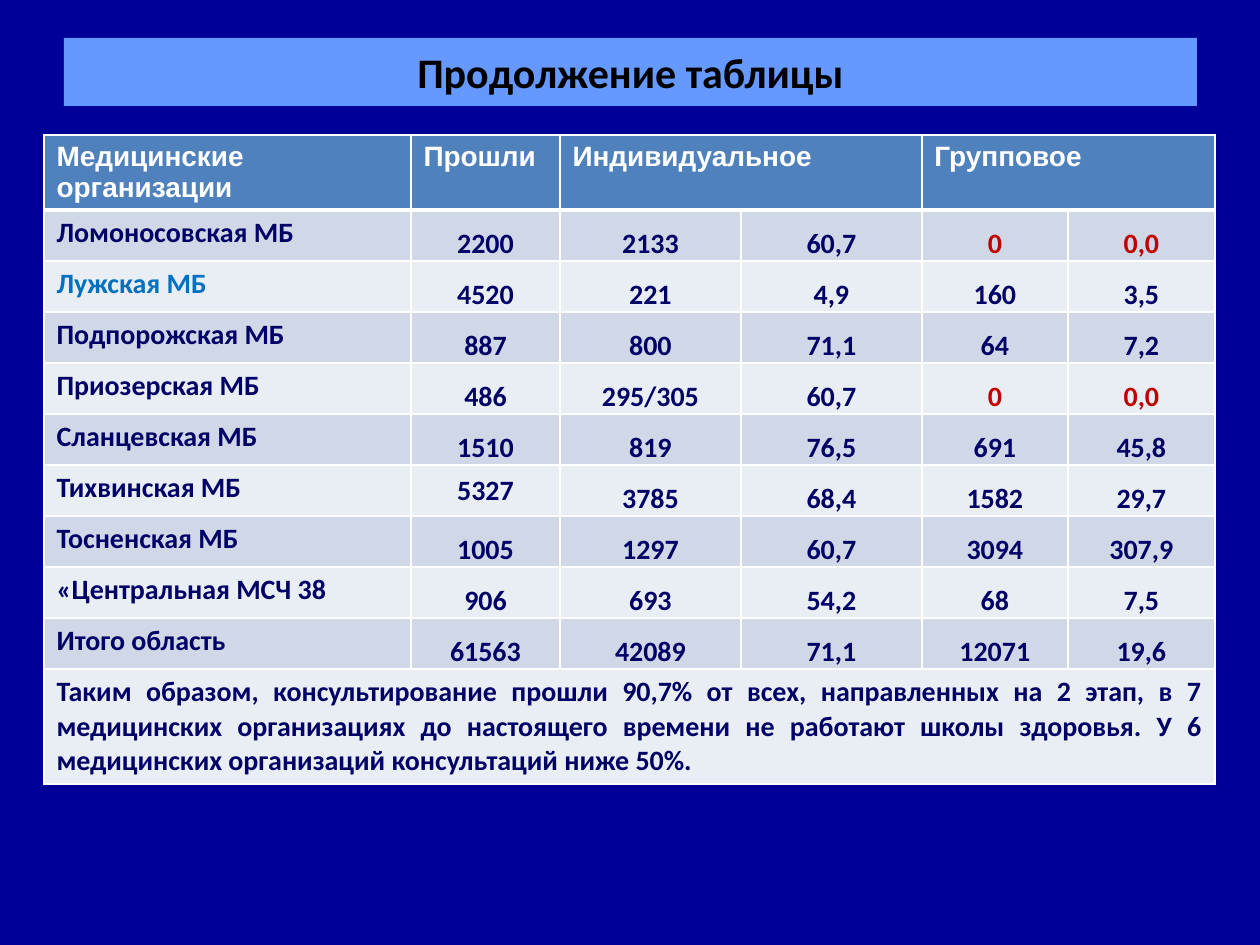
from lxml.etree import SubElement
from pptx import Presentation
from pptx.dml.color import RGBColor
from pptx.enum.text import MSO_ANCHOR, PP_ALIGN
from pptx.oxml.ns import qn
from pptx.util import Emu, Inches, Pt

PX = Inches(1) // 126
COLORS = {
    "background": "000099",
    "banner": "6699FF",
    "black": "000000",
    "white": "FFFFFF",
    "header": "4F81BD",
    "odd": "D0D8E8",
    "even": "E9EDF4",
    "navy": "000066",
    "blue": "0070C0",
    "red": "C00000",
}

HEADINGS = ["Медицинские организации", "Прошли", "Индивидуальное", "", "Групповое", ""]
CLINICS = [
    ["Ломоносовская МБ", "2200", "2133", "60,7", "0", "0,0"],
    ["Лужская МБ", "4520", "221", "4,9", "160", "3,5"],
    ["Подпорожская МБ", "887", "800", "71,1", "64", "7,2"],
    ["Приозерская МБ", "486", "295/305", "60,7", "0", "0,0"],
    ["Сланцевская МБ", "1510", "819", "76,5", "691", "45,8"],
    ["Тихвинская МБ", "5327", "3785", "68,4", "1582", "29,7"],
    ["Тосненская МБ", "1005", "1297", "60,7", "3094", "307,9"],
    ["«Центральная МСЧ 38", "906", "693", "54,2", "68", "7,5"],
    ["Итого область", "61563", "42089", "71,1", "12071", "19,6"],
]
CONCLUSION = (
    "Таким образом, консультирование прошли 90,7% от всех, направленных на 2 этап, "
    "в 7 медицинских организациях до настоящего времени не работают школы здоровья. "
    "У 6 медицинских организаций консультаций ниже 50%."
)
COLUMN_WIDTHS = [367, 149, 181, 181, 146, 147]
ROW_HEIGHTS = [75] + [51] * len(CLINICS) + [115]
TEXT_COLORS = {"Лужская МБ": "blue", "0": "red", "0,0": "red"}


def px(length):
    return Emu(length * PX)


def rgb(name):
    return RGBColor.from_string(COLORS[name])


class Deck:
    def __init__(self, width, height):
        self.presentation = Presentation()
        self.presentation.slide_width = px(width)
        self.presentation.slide_height = px(height)
        self.slide = None

    def add_slide(self):
        self.slide = self.presentation.slides.add_slide(self.presentation.slide_layouts[5])
        fill = self.slide.background.fill
        fill.solid()
        fill.fore_color.rgb = rgb("background")

    def set_text(self, frame, text, size, color, font="Calibri", align=PP_ALIGN.LEFT):
        frame.text = text
        paragraph = frame.paragraphs[0]
        paragraph.alignment = align
        paragraph.font.name = font
        paragraph.font.size = Pt(size)
        paragraph.font.bold = True
        paragraph.font.color.rgb = rgb(color)

    def title(self, text, left, top, width, height):
        banner = self.slide.shapes.title
        banner.left, banner.top = px(left), px(top)
        banner.width, banner.height = px(width), px(height)
        banner.fill.solid()
        banner.fill.fore_color.rgb = rgb("banner")
        banner.text_frame.vertical_anchor = MSO_ANCHOR.MIDDLE
        self.set_text(banner.text_frame, text, 24, "black", align=PP_ALIGN.CENTER)

    def table(self, left, top, widths, heights):
        table = self.slide.shapes.add_table(
            len(heights), len(widths), px(left), px(top), px(sum(widths)), px(sum(heights))
        ).table
        for column, width in zip(table.columns, widths):
            column.width = px(width)
        for row, height in zip(table.rows, heights):
            row.height = px(height)
        return table

    def cell(self, cell, text, fill, color, top=1, bottom=1, **style):
        properties = cell._tc.get_or_add_tcPr()
        for side, weight in (("L", 1), ("R", 1), ("T", top), ("B", bottom)):
            line = SubElement(properties, qn(f"a:ln{side}"), w=str(Pt(weight)))
            solid = SubElement(line, qn("a:solidFill"))
            SubElement(solid, qn("a:srgbClr"), val=COLORS["white"])
        cell.fill.solid()
        cell.fill.fore_color.rgb = rgb(fill)
        self.set_text(cell.text_frame, text, 16, color, **style)

    def number(self, cell, text, fill, color, top):
        self.cell(cell, text, fill, color, top, align=PP_ALIGN.CENTER)
        cell.margin_left = cell.margin_right = cell.margin_top = px(1)
        cell.margin_bottom = 0
        cell.vertical_anchor = MSO_ANCHOR.BOTTOM

    def save(self):
        self.presentation.save("out.pptx")


def main():
    deck = Deck(1260, 945)
    deck.add_slide()
    deck.title("Продолжение таблицы", 64, 38, 1133, 68)
    results = deck.table(44, 135, COLUMN_WIDTHS, ROW_HEIGHTS)

    for column, heading in enumerate(HEADINGS):
        deck.cell(results.cell(0, column), heading, "header", "white", bottom=3, font="Arial")
    for column in (2, 4):
        results.cell(0, column).merge(results.cell(0, column + 1))

    for row, clinic in enumerate(CLINICS, 1):
        fill = "odd" if row % 2 else "even"
        top = 3 if row == 1 else 1
        for column, value in enumerate(clinic):
            draw = deck.number if column else deck.cell
            draw(results.cell(row, column), value, fill, TEXT_COLORS.get(value, "navy"), top)
    results.cell(6, 1).vertical_anchor = MSO_ANCHOR.MIDDLE

    last = len(ROW_HEIGHTS) - 1
    for column in range(len(COLUMN_WIDTHS)):
        text = "" if column else CONCLUSION
        deck.cell(results.cell(last, column), text, "even", "navy", align=PP_ALIGN.JUSTIFY)
    results.cell(last, 0).merge(results.cell(last, len(COLUMN_WIDTHS) - 1))
    deck.save()


if __name__ == "__main__":
    main()
